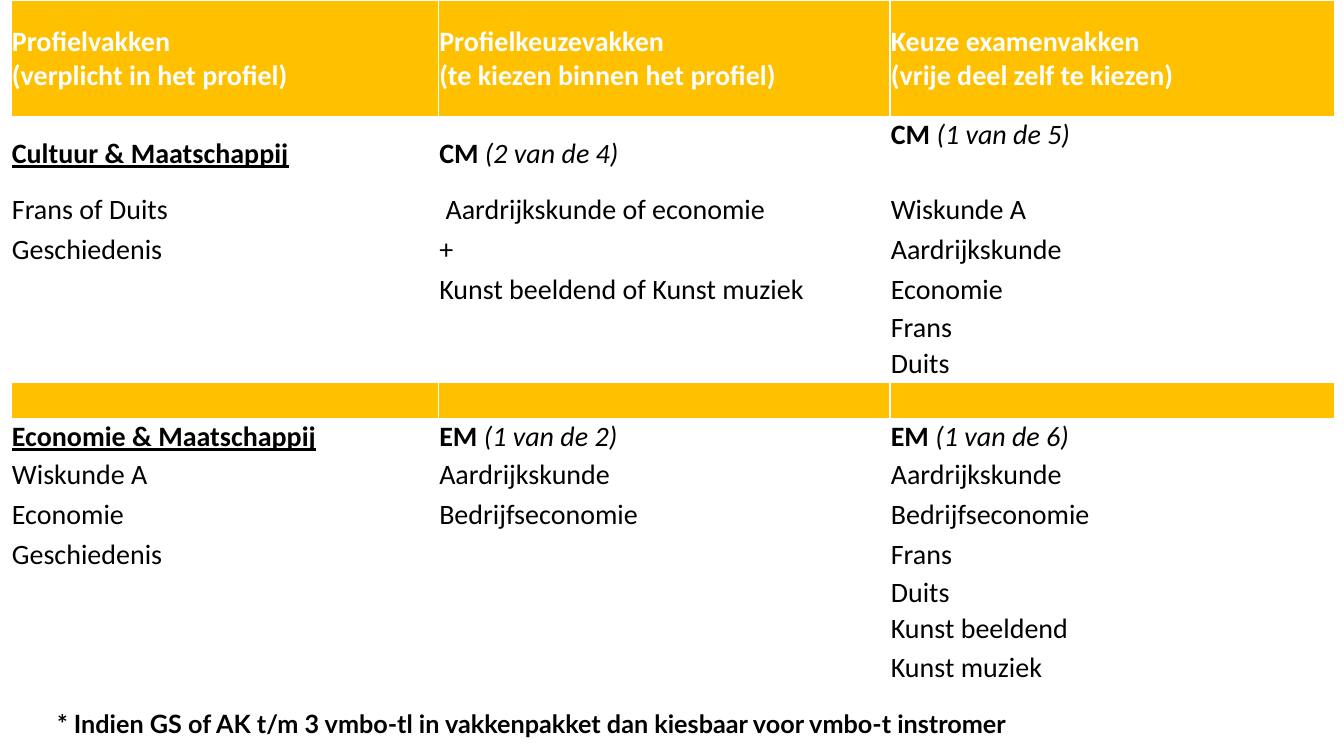
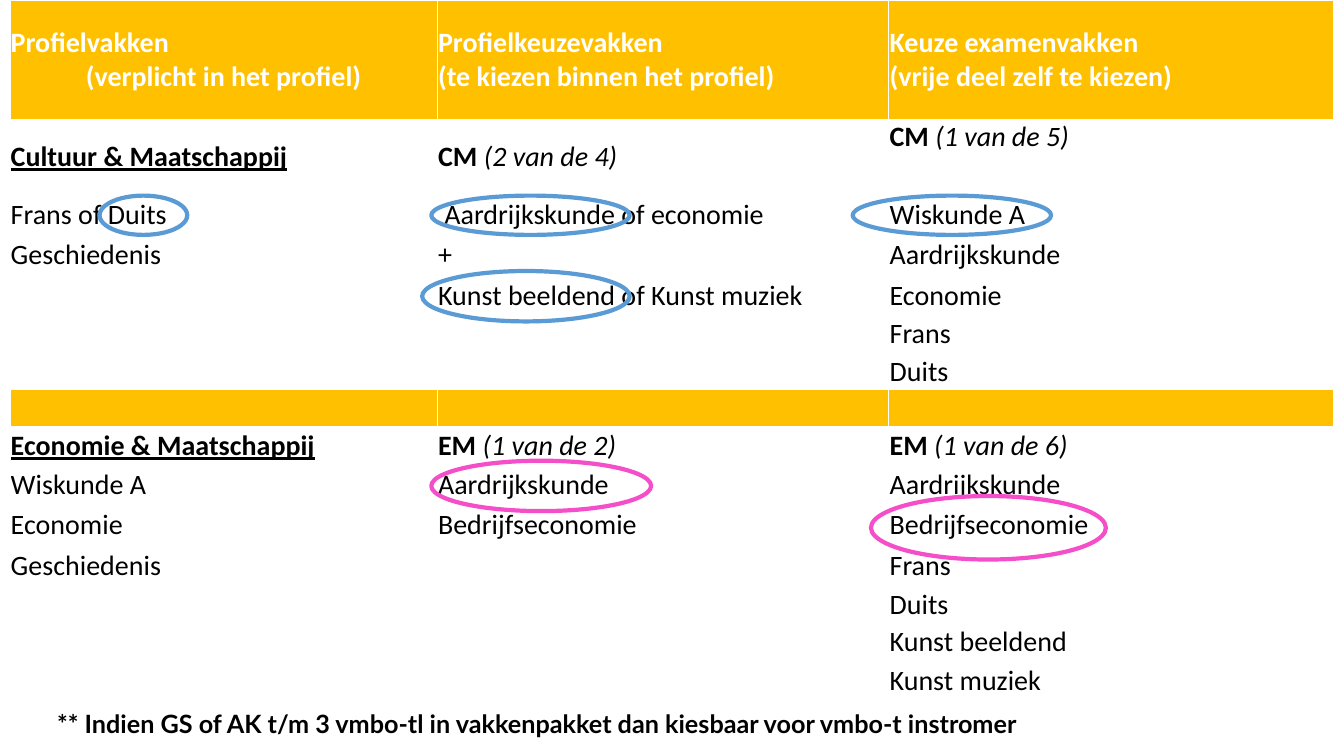
import pptx
import pptx.dml.color
import pptx.enum.shapes
import pptx.enum.text
import pptx.oxml
import pptx.oxml.ns
import pptx.util
from pptx.util import Cm, Pt

HUES = {"gold": "FFC000", "white": "FFFFFF", "black": "000000",
        "blue": "5B9BD5", "pink": "F44EC9"}
WIDTHS = [10.77, 11.38, 11.2]
TALL, HEAD, LINE, SLIM = 2.95, 1.84, 1, 0.92
HEIGHTS = [TALL, HEAD, LINE, LINE, LINE, SLIM, SLIM, SLIM, SLIM,
           LINE, LINE, LINE, SLIM, SLIM, LINE]
TOPS = [("Profielvakken", "(verplicht in het profiel)"),
        ("Profielkeuzevakken", "(te kiezen binnen het profiel)"),
        ("Keuze examenvakken", "(vrije deel zelf te kiezen)")]
# First row and columns of each profile: heading, then its subjects
CULTURE = (1, [
    ([("Cultuur & Maatschappij", "bu")], ["Frans of Duits", "Geschiedenis"]),
    ([("CM ", "b"), ("(2 van de 4)", "i")],
     [" Aardrijkskunde of economie", "+", "Kunst beeldend of Kunst muziek"]),
    ([("CM ", "b"), ("(1 van de 5)", "i")],
     ["Wiskunde A", "Aardrijkskunde", "Economie", "Frans", "Duits"])])
TRADE = (8, [
    ([("Economie & Maatschappij", "bu")],
     ["Wiskunde A", "Economie", "Geschiedenis"]),
    ([("EM ", "b"), ("(1 van de 2)", "i")],
     ["Aardrijkskunde", "Bedrijfseconomie"]),
    ([("EM ", "b"), ("(1 van de 6)", "i")],
     ["Aardrijkskunde", "Bedrijfseconomie", "Frans", "Duits",
      "Kunst beeldend", "Kunst muziek"])])
BANDS = (0, 7)
NOTE = "Indien GS of AK t/m 3 vmbo-tl in vakkenpakket dan kiesbaar voor vmbo-t instromer"
RINGS = [("blue", 10.87, 4.93, 5, 0.99), ("pink", 10.87, 11.61, 5.54, 1.27),
         ("blue", 10.64, 6.83, 5.23, 1.27), ("blue", 21.49, 4.93, 5, 0.99),
         ("pink", 21.95, 12.5, 5.92, 1.6), ("blue", 2.51, 4.93, 2.21, 0.99)]


def rgb(hue):
    return pptx.dml.color.RGBColor.from_string(HUES[hue])


class Deck:
    def __init__(self):
        self.show = pptx.Presentation()
        self.show.slide_width, self.show.slide_height = Cm(33.87), Cm(19.05)
        self.slide = None

    def page(self):
        self.slide = self.show.slides.add_slide(self.show.slide_layouts[6])

    def run(self, para, text, style="", hue="black", size=20, face="Calibri"):
        """Style letters: b bold, i italic, u underlined."""
        run = para.add_run()
        run.text = text
        font = run.font
        font.name, font.size, font.color.rgb = face, Pt(size), rgb(hue)
        font.bold, font.italic, font.underline = (k in style for k in "biu")

    def edge(self, cell):
        """Draws thin white borders; they must precede the fill in the XML."""
        props = cell._tc.get_or_add_tcPr()
        for spot, side in enumerate("LRTB"):
            props.insert(spot, pptx.oxml.parse_xml(
                f'<a:ln{side} {pptx.oxml.ns.nsdecls("a")} w="12700"><a:solidFill>'
                f'<a:srgbClr val="{HUES["white"]}"/></a:solidFill></a:ln{side}>'))

    def grid(self, left, scale):
        high = [Cm(h * scale) for h in HEIGHTS]
        frame = self.slide.shapes.add_table(
            len(high), len(WIDTHS), Cm(left), 0, Cm(sum(WIDTHS)), sum(high))
        table = frame.table
        table.first_row = table.horz_banding = False
        for col, wide in zip(table.columns, WIDTHS):
            col.width = Cm(wide)
        for num, row in enumerate(table.rows):
            row.height = high[num]
            for cell in row.cells:
                cell.margin_left = cell.margin_right = cell.margin_top = Cm(0.02)
                cell.margin_bottom = 0
                cell.vertical_anchor = pptx.enum.text.MSO_ANCHOR.MIDDLE
                cell.fill.solid()
                cell.fill.fore_color.rgb = rgb("gold" if num in BANDS else "white")
                self.edge(cell)
        return table

    def plan(self, left, scale=1):
        """Adds the table of subjects."""
        table = self.grid(left, scale)
        for col, (name, hint) in enumerate(TOPS):
            frame = table.cell(0, col).text_frame
            self.run(frame.paragraphs[0], name, "b", "white")
            self.run(frame.add_paragraph(), hint, "b", "white")
        for first, cols in (CULTURE, TRADE):
            for col, (head, items) in enumerate(cols):
                lines = [head] + [[(item, "")] for item in items]
                for row, runs in enumerate(lines, first):
                    para = table.cell(row, col).text_frame.paragraphs[0]
                    for text, style in runs:
                        self.run(para, text, style)
        table.cell(1, 2).vertical_anchor = pptx.enum.text.MSO_ANCHOR.TOP
        return table

    def note(self, mark):
        box = self.slide.shapes.add_textbox(Cm(1.19), Cm(17.65), Cm(26.7), Cm(1.07))
        frame = box.text_frame
        frame.word_wrap = True
        frame.auto_size = pptx.enum.text.MSO_AUTO_SIZE.SHAPE_TO_FIT_TEXT
        para = frame.paragraphs[0]
        para.line_spacing = 1.1
        self.run(para, f"{mark} {NOTE}", "b", size=18, face="Lato")

    def ring(self, hue, *place):
        ring = self.slide.shapes.add_shape(
            pptx.enum.shapes.MSO_SHAPE.OVAL, *map(Cm, place))
        ring.shadow.inherit = False
        ring.fill.background()
        ring.line.color.rgb = rgb(hue)
        ring.line.width = Pt(3)


def main():
    deck = Deck()
    deck.page()
    deck.plan(0.28)
    deck.note("*")

    deck.page()
    table = deck.plan(0.25, 1.02)
    hint = table.cell(0, 0).text_frame.paragraphs[1]
    hint.alignment = pptx.enum.text.PP_ALIGN.CENTER
    deck.note("**")
    for ring in RINGS:
        deck.ring(*ring)
    deck.show.save("out.pptx")


if __name__ == "__main__":
    main()
